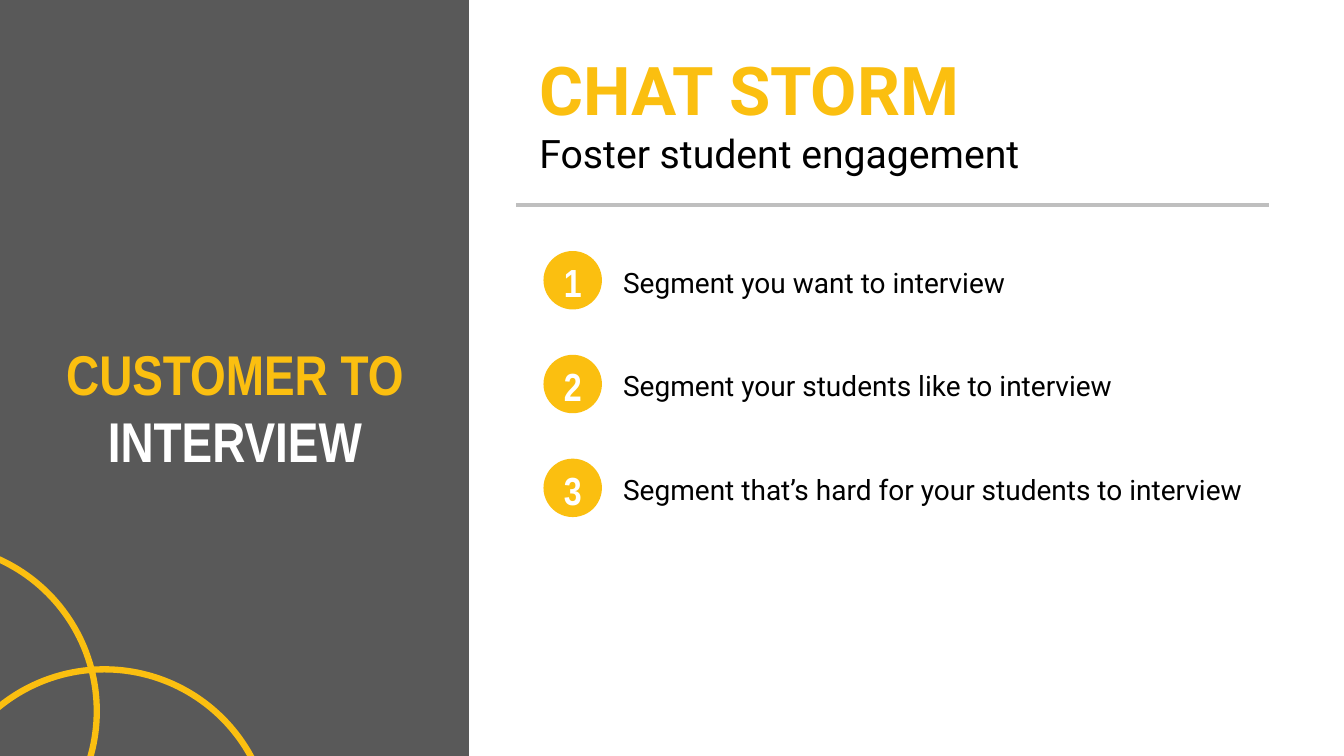
from lxml import etree
from pptx import Presentation
from pptx.dml.color import RGBColor
from pptx.enum import shapes, text
from pptx.oxml import ns
from pptx.util import Inches, Pt

YELLOW, GREY, SILVER = "FBBF10", "595959", "BFBFBF"
WHITE, BLACK = "FFFFFF", "000000"
HEADING_FONT, BODY_FONT = "Arial Narrow", "Roboto"

SEGMENTS = [
    "Segment you want to interview",
    "Segment your students like to interview",
    "Segment that’s hard for your students to interview",
]


def color(value):
    return RGBColor.from_string(value)


def place(shape, left, top, width, height):
    shape.left, shape.top = Inches(left), Inches(top)
    shape.width, shape.height = Inches(width), Inches(height)


def write(shape, lines, align=text.PP_ALIGN.LEFT, anchor=text.MSO_ANCHOR.TOP, gap=0):
    """Fill a shape with one paragraph per (words, size, font, colour, bold)."""
    frame = shape.text_frame
    frame.word_wrap = True
    frame.auto_size = text.MSO_AUTO_SIZE.NONE
    frame.vertical_anchor = anchor
    for index, (words, size, font, fill, bold) in enumerate(lines):
        paragraph = frame.add_paragraph() if index else frame.paragraphs[0]
        paragraph.alignment = align
        paragraph.space_before = Pt(0)
        paragraph.space_after = Pt(gap)
        run = paragraph.add_run()
        run.text = words
        run.font.size, run.font.name, run.font.bold = Pt(size), font, bold
        run.font.color.rgb = color(fill)


def remove_bullets(shape):
    for paragraph in shape.text_frame.paragraphs:
        properties = paragraph._p.get_or_add_pPr()
        properties.set("marL", "0")
        properties.set("indent", "0")
        etree.SubElement(properties, ns.qn("a:buNone"))


def add_filled(slide, kind, left, top, width, height, fill):
    shape = slide.shapes.add_shape(
        kind, Inches(left), Inches(top), Inches(width), Inches(height))
    shape.shadow.inherit = False
    shape.fill.solid()
    shape.fill.fore_color.rgb = color(fill)
    shape.line.fill.background()
    return shape


def add_ring(slide, left, top, diameter):
    ring = slide.shapes.add_shape(
        shapes.MSO_SHAPE.OVAL, Inches(left), Inches(top),
        Inches(diameter), Inches(diameter))
    ring.shadow.inherit = False
    ring.fill.background()
    ring.line.color.rgb = color(YELLOW)
    ring.line.width = Pt(4.5)


def add_rule(slide, left, right, top):
    rule = slide.shapes.add_connector(
        shapes.MSO_CONNECTOR.STRAIGHT,
        Inches(left), Inches(top), Inches(right), Inches(top))
    rule.line.color.rgb = color(SILVER)
    rule.line.width = Pt(3)
    etree.SubElement(rule._element.spPr, ns.qn("a:effectLst"))


def add_badge(slide, number, left, top, diameter):
    badge = add_filled(slide, shapes.MSO_SHAPE.OVAL, left, top, diameter, diameter, YELLOW)
    write(badge, [(str(number), 28, HEADING_FONT, WHITE, True)],
          text.PP_ALIGN.CENTER, text.MSO_ANCHOR.MIDDLE)
    frame = badge.text_frame
    frame.word_wrap = False
    frame.margin_left = frame.margin_right = 0
    frame.margin_top, frame.margin_bottom = Inches(0.04), 0


def main():
    presentation = Presentation()
    presentation.slide_width, presentation.slide_height = Inches(13.33), Inches(7.5)
    slide = presentation.slides.add_slide(presentation.slide_layouts[1])
    title, body = slide.placeholders

    # Dark side panel with rings and caption
    add_filled(slide, shapes.MSO_SHAPE.RECTANGLE, 0, 0, 4.65, 7.5, GREY)
    for left, top in [(-2.35, 5.4), (-0.62, 6.64)]:
        add_ring(slide, left, top, 3.31)
    caption = slide.shapes.add_textbox(
        Inches(0.3), Inches(3.32), Inches(4.06), Inches(1.45))
    write(caption, [("CUSTOMER TO", 40, HEADING_FONT, YELLOW, True),
                    ("INTERVIEW", 40, HEADING_FONT, WHITE, True)],
          text.PP_ALIGN.CENTER)

    # Title, subtitle and rule
    place(title, 5.25, 0.43, 7.43, 1.38)
    write(title, [("CHAT STORM", 48, BODY_FONT, YELLOW, True),
                  ("Foster student engagement", 28, BODY_FONT, BLACK, False)])
    add_rule(slide, 5.12, 12.59, 2.03)

    # Numbered segments
    place(body, 6.08, 2.58, 6.51, 2.48)
    write(body, [(segment, 20, BODY_FONT, BLACK, False) for segment in SEGMENTS], gap=50)
    remove_bullets(body)
    for index in range(len(SEGMENTS)):
        add_badge(slide, index + 1, 5.39, 2.49 + 1.03 * index, 0.58)

    presentation.save("out.pptx")


if __name__ == "__main__":
    main()
